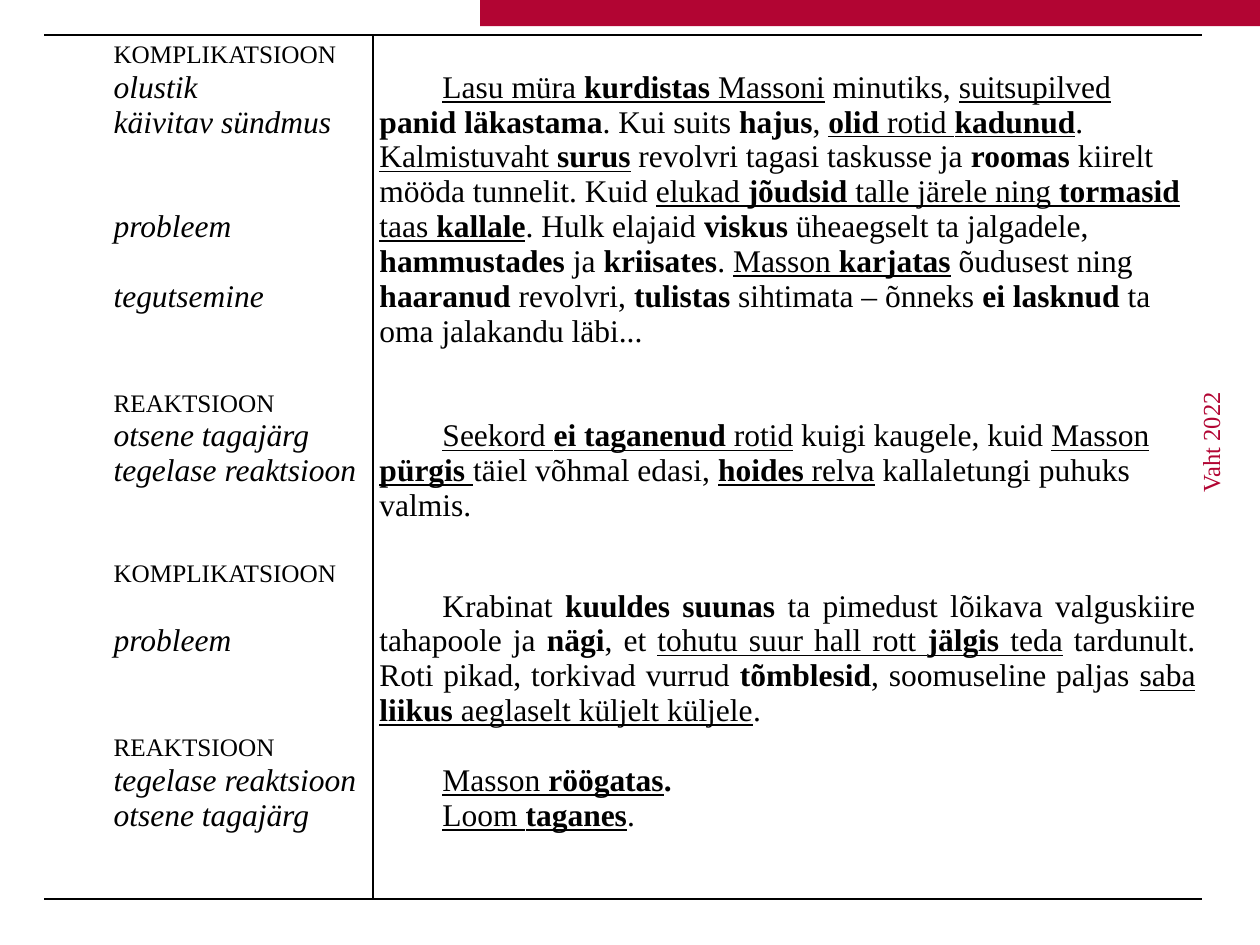
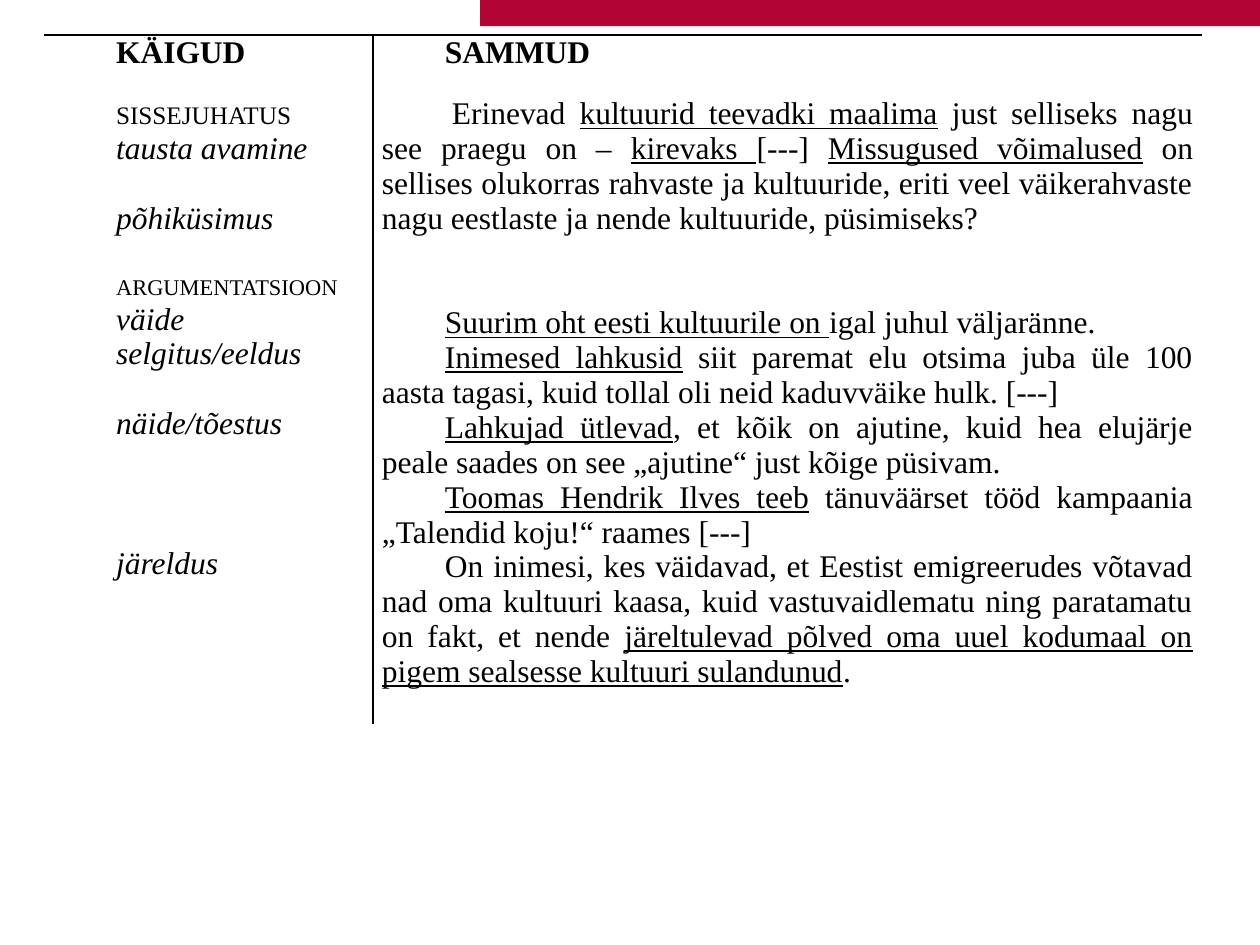
"""Build two slides that set the moves and steps of Estonian texts side by side."""
import pptx
import pptx.dml.color
import pptx.enum.shapes
import pptx.enum.text
import pptx.oxml
import pptx.oxml.ns
import pptx.util

Cm = pptx.util.Cm
Pt = pptx.util.Pt
BLACK = pptx.dml.color.RGBColor(0x00, 0x00, 0x00)
CRIMSON = pptx.dml.color.RGBColor(0xB2, 0x05, 0x33)
FONT = "Times New Roman"
LINE_POINTS = 19.93
NO_TABLE_STYLE = "{2D5ABB26-0587-4C30-8999-92F81FD0307C}"

# Each paragraph is (style, text, blank lines above); *bold* and _underlined_ mark runs.
STORY_ROWS = [
    (7.03,
     [("move", "komplikatsioon", 0), ("step", "olustik", 0),
      ("step", "käivitav sündmus", 0), ("step", "probleem", 2),
      ("step", "tegutsemine", 1)],
     [("text", "_Lasu müra *kurdistas* Massoni_ minutiks, _suitsupilved_ "
       "*panid läkastama*. Kui suits *hajus*, _*olid* rotid *kadunud*_. "
       "_Kalmistuvaht *surus*_ revolvri tagasi taskusse ja *roomas* kiirelt "
       "mööda tunnelit. Kuid _elukad *jõudsid* talle järele ning *tormasid* "
       "taas *kallale*_. Hulk elajaid *viskus* üheaegselt ta jalgadele, "
       "*hammustades* ja *kriisates*. _Masson *karjatas*_ õudusest ning "
       "*haaranud* revolvri, *tulistas* sihtimata – õnneks *ei lasknud* ta "
       "oma jalakandu läbi...", 1)]),
    (3.43,
     [("move", "reaktsioon", 0), ("step", "otsene tagajärg", 0),
      ("step", "tegelase reaktsioon", 0)],
     [("text", "_Seekord *ei taganenud* rotid_ kuigi kaugele, kuid _Masson "
       "*pürgis *_täiel võhmal edasi, _*hoides* relva_ kallaletungi puhuks "
       "valmis.", 1)]),
    (3.51,
     [("move", "komplikatsioon", 0), ("step", "probleem", 1)],
     [("justified", "Krabinat *kuuldes suunas* ta pimedust lõikava valguskiire "
       "tahapoole ja *nägi*, et _tohutu suur hall rott *jälgis* teda_ "
       "tardunult. Roti pikad, torkivad vurrud *tõmblesid*, soomuseline "
       "paljas _saba *liikus* aeglaselt küljelt küljele_.", 1)]),
    (3.43,
     [("move", "reaktsioon", 0), ("step", "tegelase reaktsioon", 0),
      ("step", "otsene tagajärg", 0)],
     [("text", "_Masson *röögatas*_*.*", 1), ("text", "_Loom *taganes*_.", 0)]),
]

ESSAY_ROWS = [
    (1.24, [("text", "*KÄIGUD*", 0)], [("text", "*SAMMUD*", 0)]),
    (3.51,
     [("move", "sissejuhatus", 0), ("step", "tausta avamine", 0),
      ("step", "põhiküsimus", 1)],
     [("opening", "Erinevad _kultuurid teevadki maalima_ just selliseks nagu "
       "see praegu on – _kirevaks _[---] _Missugused võimalused_ on sellises "
       "olukorras rahvaste ja kultuuride, eriti veel väikerahvaste nagu "
       "eestlaste ja nende kultuuride, püsimiseks?", 0)]),
    (9.14,
     [("long move", "argumentatsioon", 0), ("step", "väide", 0),
      ("step", "selgitus/eeldus", 0), ("step", "näide/tõestus", 1),
      ("step", "järeldus", 3)],
     [("justified", "_Suurim oht eesti kultuurile on _igal juhul väljaränne.", 1),
      ("justified", "_Inimesed lahkusid_ siit paremat elu otsima juba üle 100 "
       "aasta tagasi, kuid tollal oli neid kaduvväike hulk. [---]", 0),
      ("justified", "_Lahkujad ütlevad_, et kõik on ajutine, kuid hea elujärje "
       "peale saades on see „ajutine“ just kõige püsivam.", 0),
      ("justified", "_Toomas Hendrik Ilves teeb_ tänuväärset tööd kampaania "
       "„Talendid koju!“ raames [---]", 0),
      ("justified", "On inimesi, kes väidavad, et Eestist emigreerudes võtavad "
       "nad oma kultuuri kaasa, kuid vastuvaidlematu ning paratamatu on fakt, "
       "et nende _järeltulevad põlved oma uuel kodumaal on pigem sealsesse "
       "kultuuri sulandunud_.", 0)]),
]


class SlideBuilder:
    """Hold the shared style and the slide being built."""

    def __init__(self, presentation):
        self.presentation = presentation
        self.slide = None

    def new_slide(self):
        """Start a blank slide with the crimson band at its top."""
        layout = self.presentation.slide_layouts[6]
        self.slide = self.presentation.slides.add_slide(layout)
        band = self.slide.shapes.add_shape(
            pptx.enum.shapes.MSO_SHAPE.RECTANGLE, Cm(9.68), 0, Cm(15.72), Cm(0.53))
        band.shadow.inherit = False
        band.fill.solid()
        band.fill.fore_color.rgb = CRIMSON
        band.line.fill.background()

    def style_run(self, run, size, color):
        """Give a run the shared font."""
        run.font.name = FONT
        run.font.size = Pt(size)
        run.font.color.rgb = color

    def border(self, cell, side, width):
        """Draw one black border of a cell."""
        line = pptx.oxml.parse_xml(
            f'<a:ln{side} {pptx.oxml.ns.nsdecls("a")} w="{Pt(width)}">'
            f'<a:solidFill><a:srgbClr val="{BLACK}"/></a:solidFill></a:ln{side}>')
        cell._tc.get_or_add_tcPr().append(line)

    def write_paragraph(self, paragraph, style, text):
        """Write marked text into a paragraph in the named style."""
        indent = Cm(1.41 if style == "opening" else 1.27)
        properties = paragraph._p.get_or_add_pPr()
        properties.set("marL", "0")
        properties.set("indent", str(indent))
        if style in ("justified", "opening"):
            paragraph.alignment = pptx.enum.text.PP_ALIGN.JUSTIFY
        for underline_index, part in enumerate(text.split("_")):
            for bold_index, piece in enumerate(part.split("*")):
                if not piece:
                    continue
                run = paragraph.add_run()
                run.text = piece
                self.style_run(run, 16 if style == "long move" else 18, BLACK)
                run.font.underline = underline_index % 2 == 1
                run.font.bold = bold_index % 2 == 1
                run.font.italic = style == "step"
                if style.endswith("move"):
                    run.font._element.set("cap", "small")

    def fill_cell(self, cell, paragraphs, side_margin):
        """Fill a cell, turning blank lines into margin or paragraph spacing."""
        cell.fill.background()
        cell.margin_left = cell.margin_right = Cm(side_margin)
        cell.margin_top = cell.margin_bottom = 0
        for index, (style, text, gap) in enumerate(paragraphs):
            space = Pt(LINE_POINTS * gap)
            if index == 0:
                paragraph = cell.text_frame.paragraphs[0]
                cell.margin_top = space
            else:
                paragraph = cell.text_frame.add_paragraph()
                paragraph.space_before = space
            self.write_paragraph(paragraph, style, text)

    def analysis_table(self, rows, side_margin, closed):
        """Add the table of moves and steps, closed by a bottom rule if asked."""
        widths = (6.63, 16.71)
        table = self.slide.shapes.add_table(
            len(rows), len(widths), Cm(0.89), Cm(0.71), Cm(sum(widths)),
            Cm(sum(row[0] for row in rows))).table
        table.first_row = table.horz_banding = False
        table._tbl.tblPr.find(pptx.oxml.ns.qn("a:tableStyleId")).text = NO_TABLE_STYLE
        for column, width in zip(table.columns, widths):
            column.width = Cm(width)
        for row_index, (height, *contents) in enumerate(rows):
            table.rows[row_index].height = Cm(height)
            for column_index, paragraphs in enumerate(contents):
                cell = table.cell(row_index, column_index)
                self.border(cell, "L" if column_index else "R", 1)
                if row_index == 0:
                    self.border(cell, "T", 1.5)
                if closed and row_index == len(rows) - 1:
                    self.border(cell, "B", 1.5)
                self.fill_cell(cell, paragraphs, side_margin)

    def side_note(self, text):
        """Add a source note that reads upwards along the right edge."""
        box = self.slide.shapes.add_textbox(Cm(23.98), Cm(5.13), Cm(1.12), Cm(5.05))
        text_frame = box.text_frame
        text_frame.word_wrap = True
        text_frame._txBody.bodyPr.set("vert", "vert270")
        text_frame.text = text
        self.style_run(text_frame.paragraphs[0].runs[0], 14, CRIMSON)


def main():
    """Build and save the presentation."""
    presentation = pptx.Presentation()
    presentation.slide_width = Cm(25.4)
    presentation.slide_height = Cm(19.05)
    builder = SlideBuilder(presentation)

    builder.new_slide()
    builder.analysis_table(STORY_ROWS, 0.13, closed=True)
    builder.side_note("Vaht 2022")

    builder.new_slide()
    builder.analysis_table(ESSAY_ROWS, 0.18, closed=False)

    presentation.save("out.pptx")


if __name__ == "__main__":
    main()
